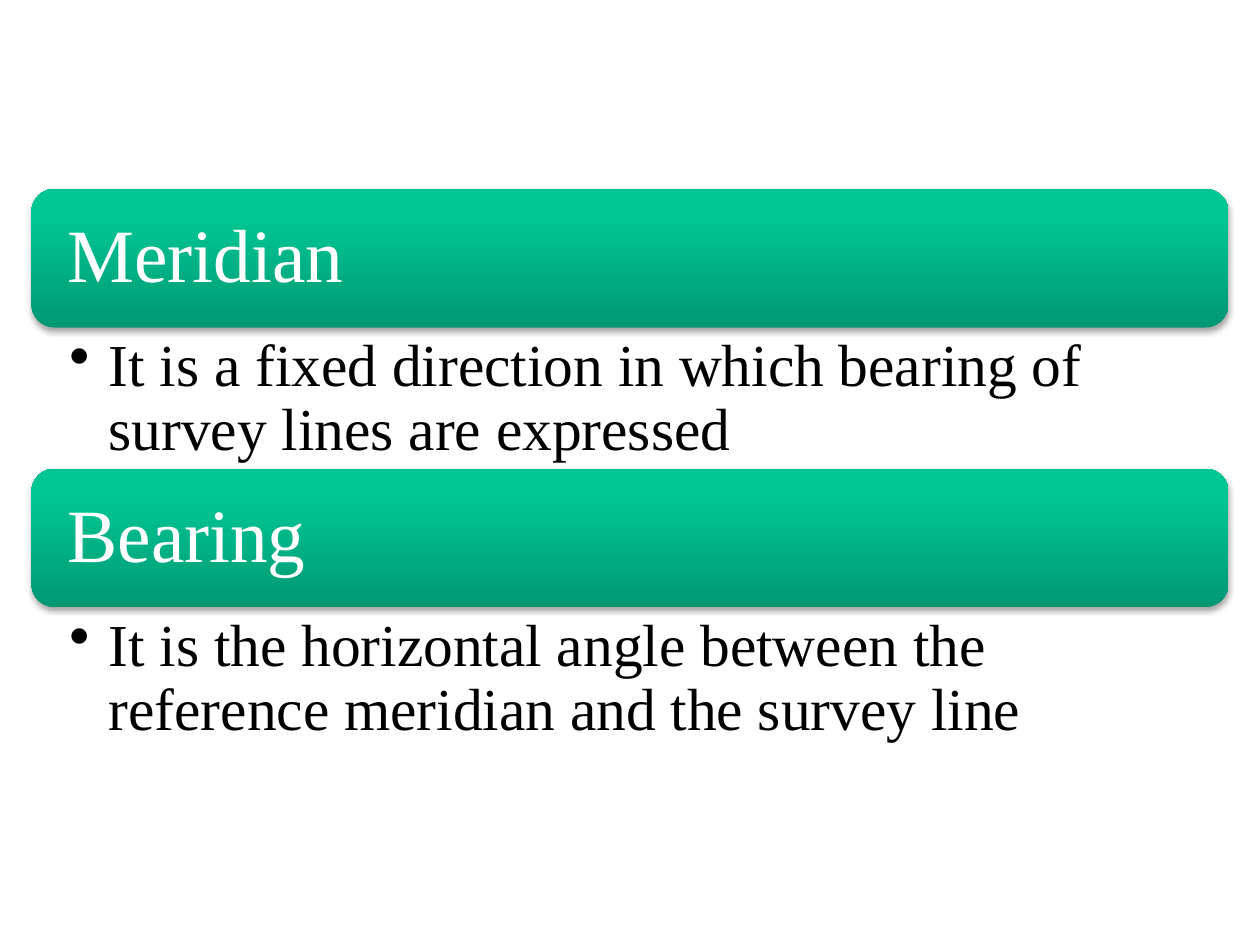
"""Build a slide that defines two surveying terms."""
from copy import deepcopy

from lxml import etree
from pptx import Presentation
from pptx.dml import color
from pptx.enum import shapes, text
from pptx.oxml import ns
from pptx.util import Pt

LEFT, TOP, WIDTH = 18, 108, 684
BAR_HEIGHT, BODY_HEIGHT = 79.2, 80.64
GRADIENT = [(0, "009872"), (0.8, "00C694"), (1, "00C795")]
DEFINITIONS = [
    ("Meridian", "It is a fixed direction in which bearing of survey lines are expressed"),
    ("Bearing", "It is the horizontal angle between the reference meridian and the survey line"),
]


def rgb(value):
    """Return the colour for a hex string."""
    return color.RGBColor.from_string(value)


def set_attributes(target, values):
    """Set each attribute of the target from a dict."""
    for name, value in values.items():
        setattr(target, name, value)


def add_child(parent, tag, **attributes):
    """Append a DrawingML element with the given attributes."""
    names = {name: str(value) for name, value in attributes.items()}
    return etree.SubElement(parent, ns.qn(tag), names)


def fill_gradient(shape):
    """Fill a shape with the vertical green gradient."""
    shape.fill.gradient()
    shape.fill.gradient_angle = 90
    stop_list = shape._element.spPr.find(".//" + ns.qn("a:gsLst"))
    stop_list.append(deepcopy(stop_list[-1]))
    for stop, (position, value) in zip(shape.fill.gradient_stops, GRADIENT):
        stop.position = position
        stop.color.rgb = rgb(value)


def add_shadow(shape):
    """Give a shape a soft shadow below it."""
    shape.shadow.inherit = False
    effects = shape._element.spPr.find(ns.qn("a:effectLst"))
    shadow = add_child(effects, "a:outerShdw", blurRad=Pt(3.1), dist=Pt(1.8),
                       dir=5400000, rotWithShape=0)
    add_child(add_child(shadow, "a:srgbClr", val="000000"), "a:alpha", val=35000)


def write_text(shape, words, size, hex_color, frame_format, bullet_indent=0):
    """Write one left-aligned paragraph, with a bullet if it is indented."""
    frame = shape.text_frame
    set_attributes(frame, {"word_wrap": True, **frame_format})
    paragraph = frame.paragraphs[0]
    paragraph.text = words
    set_attributes(paragraph, {"alignment": text.PP_ALIGN.LEFT, "line_spacing": 0.9})
    if bullet_indent:
        paragraph.level = 1
        properties = paragraph._p.get_or_add_pPr()
        properties.set("marL", str(Pt(bullet_indent)))
        properties.set("indent", str(-Pt(bullet_indent)))
        add_child(properties, "a:buChar", char="•")
    set_attributes(paragraph.font, {"name": "Times New Roman", "size": Pt(size)})
    paragraph.font.color.rgb = rgb(hex_color)


def add_term_bar(slide, term, top):
    """Add a rounded bar that names a term."""
    bar = slide.shapes.add_shape(shapes.MSO_SHAPE.ROUNDED_RECTANGLE,
                                 Pt(LEFT), Pt(top), Pt(WIDTH), Pt(BAR_HEIGHT))
    fill_gradient(bar)
    bar.line.fill.background()
    add_shadow(bar)
    write_text(bar, term, 43, "FFFFFF", {
        "vertical_anchor": text.MSO_ANCHOR.MIDDLE,
        "margin_left": Pt(16.8), "margin_right": Pt(16.8),
    })


def add_definition(slide, definition, top):
    """Add the bulleted definition below a bar."""
    box = slide.shapes.add_textbox(Pt(LEFT), Pt(top), Pt(WIDTH), Pt(BODY_HEIGHT))
    write_text(box, definition, 34, "000000", {
        "vertical_anchor": text.MSO_ANCHOR.TOP,
        "margin_left": Pt(21.6), "margin_right": Pt(23.8),
        "margin_top": Pt(4.3), "margin_bottom": Pt(4.3),
    }, bullet_indent=22.5)


def main():
    """Build and save the presentation."""
    presentation = Presentation()
    set_attributes(presentation, {"slide_width": Pt(720), "slide_height": Pt(540)})
    slide = presentation.slides.add_slide(presentation.slide_layouts[6])
    for index, (term, definition) in enumerate(DEFINITIONS):
        top = TOP + index * (BAR_HEIGHT + BODY_HEIGHT)
        add_term_bar(slide, term, top)
        add_definition(slide, definition, top + BAR_HEIGHT)
    presentation.save("out.pptx")


if __name__ == "__main__":
    main()
